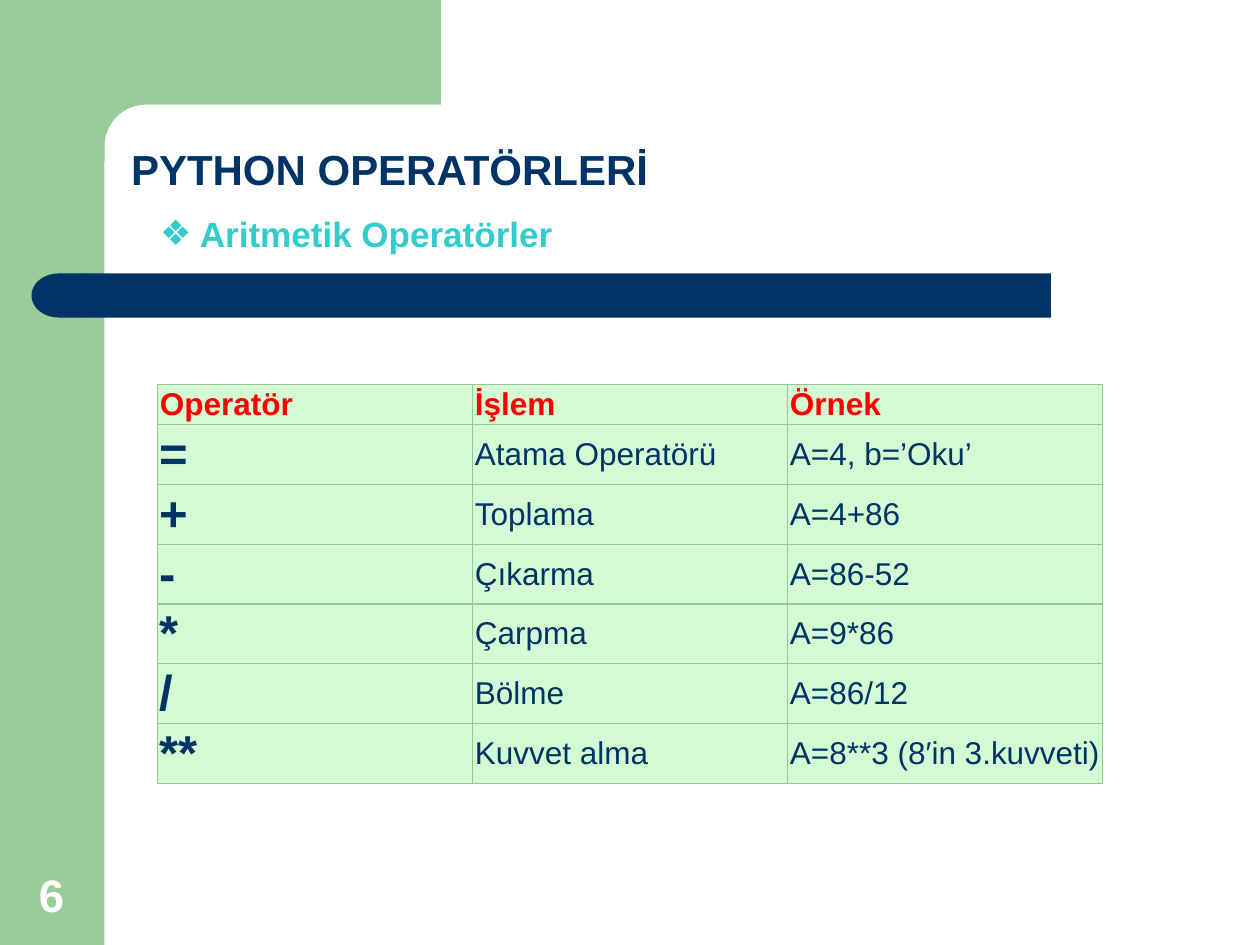
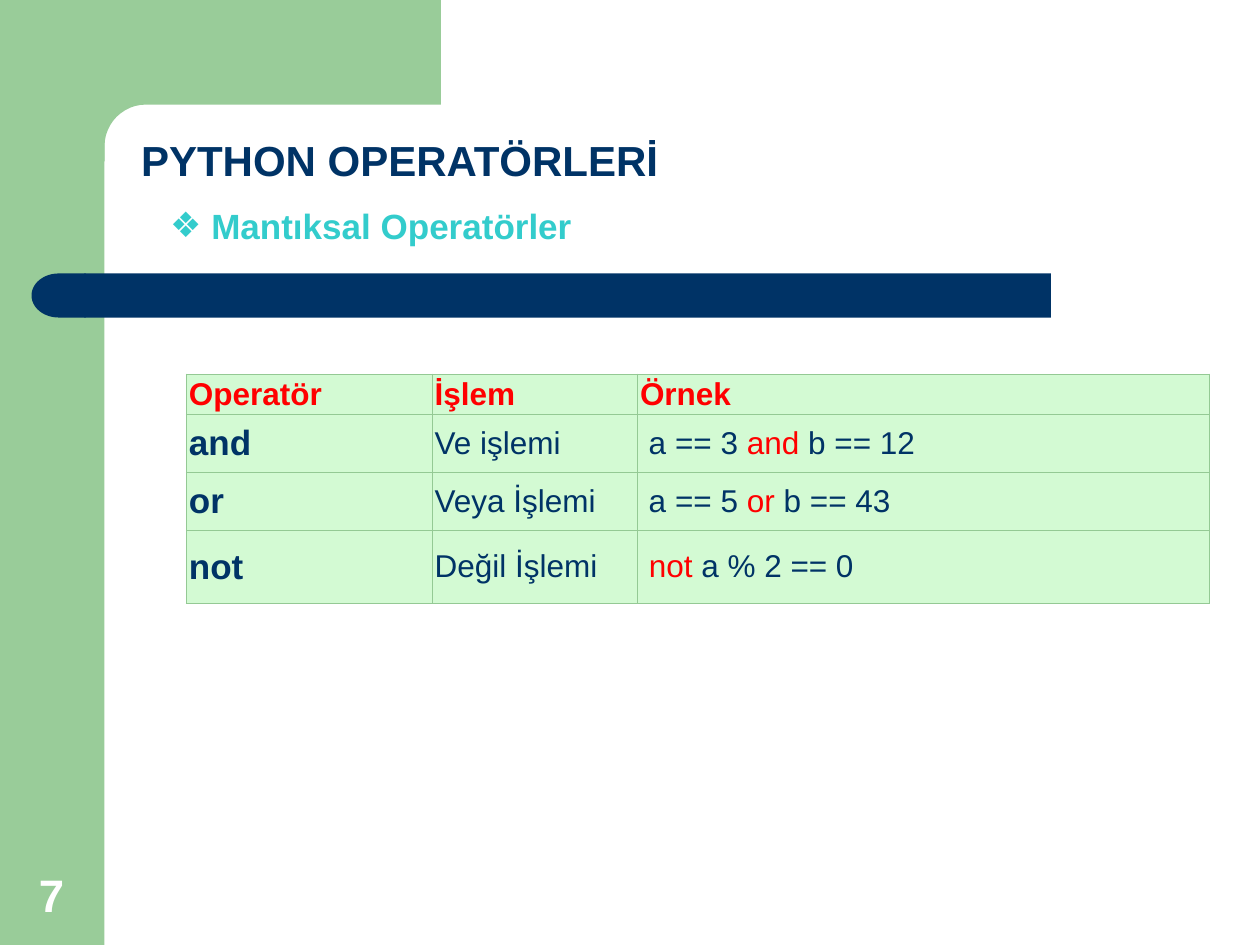
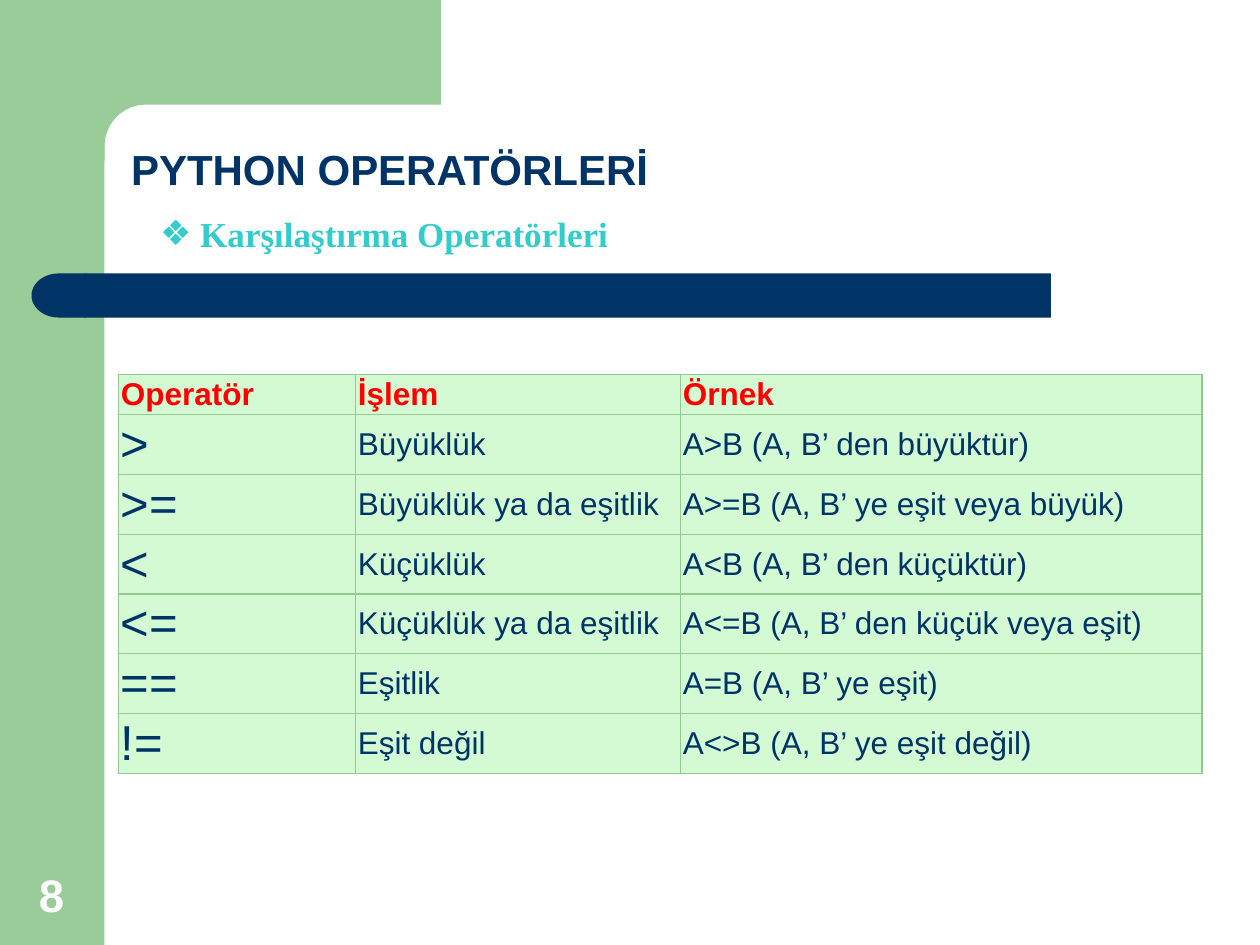
from math import cos, pi, sin

from lxml.etree import SubElement
from pptx import Presentation
from pptx.dml.color import RGBColor
from pptx.enum.shapes import MSO_SHAPE
from pptx.enum.text import MSO_ANCHOR, MSO_AUTO_SIZE, PP_ALIGN
from pptx.oxml import parse_xml
from pptx.oxml.ns import nsdecls, qn
from pptx.util import Inches, Pt

GREEN, NAVY, TEAL, RED, WHITE = "99CC99", "003366", "33CCCC", "FF0000", "FFFFFF"
PALE, EDGE = "D3FAD3", "94C994"
HEADS = ["Operatör", "İşlem", "Örnek"]

# Each topic: text, font, title spot, table spot, columns, rows, symbol style, cells
TOPICS = [
    dict(name="Aritmetik Operatörler", font="Arial", title=(0.94, 1.09),
         spot=(1.25, 3.05), cols=[2.5] * 3, rows=[0.32] + [0.475] * 6,
         size=28, bold=True, cells=[
             ("=", "Atama Operatörü", "A=4, b=’Oku’"),
             ("+", "Toplama", "A=4+86"),
             ("-", "Çıkarma", "A=86-52"),
             ("*", "Çarpma", "A=9*86"),
             ("/", "Bölme", "A=86/12"),
             ("**", "Kuvvet alma", "A=8**3 (8′in 3.kuvveti)")]),
    dict(name="Mantıksal Operatörler", font="Arial", title=(1.02, 1.02),
         spot=(1.48, 2.97), cols=[1.95, 1.63, 4.54], rows=[0.32, 0.46, 0.46, 0.58],
         size=20, bold=True, cells=[
             ("and", "Ve işlemi", [" a == 3 ", "and", " b == 12"]),
             ("or", "Veya İşlemi", [" a == 5 ", "or", " b == 43"]),
             ("not", "Değil İşlemi", [" ", "not", " a % 2 == 0"])]),
    dict(name="Karşılaştırma Operatörleri", font="Times New Roman", title=(0.94, 1.09),
         spot=(0.94, 2.97), cols=[1.88, 2.58, 4.14], rows=[0.32] + [0.475] * 6,
         size=28, bold=False, cells=[
             (">", "Büyüklük", "A>B (A, B’ den büyüktür)"),
             (">=", "Büyüklük ya da eşitlik", "A>=B (A, B’ ye eşit veya büyük)"),
             ("<", "Küçüklük", "A<B (A, B’ den küçüktür)"),
             ("<=", "Küçüklük ya da eşitlik", "A<=B (A, B’ den küçük veya eşit)"),
             ("==", "Eşitlik", "A=B (A, B’ ye eşit)"),
             ("!=", "Eşit değil", "A<>B (A, B’ ye eşit değil)")]),
]


def tint(color, code):
    color.rgb = RGBColor.from_string(code)


def put(para, text, size=18, code=NAVY, bold=False, font="Arial"):
    run = para.add_run()
    run.text = text
    run.font.size, run.font.bold, run.font.name = Pt(size), bold, font
    tint(run.font.color, code)


prs = Presentation()
prs.slide_width, prs.slide_height = Inches(10), Inches(7.5)
layout = prs.slide_layouts[1]
slides = [prs.slides.add_slide(layout) for topic in TOPICS]

# Shared bands: side strip, top block with a round inner corner, navy bar
shapes = slides[0].shapes
side = shapes.add_shape(MSO_SHAPE.RECTANGLE, 0, 0, Inches(0.83), Inches(7.5))
turns = [pi / 2 * step / 12 for step in range(13)]
curve = [(1.16 - 0.33 * sin(turn), 1.16 - 0.33 * cos(turn)) for turn in turns]
outline = [(3.5, 0.83), *curve, (0.83, 1.28), (0.5, 1.28), (0.5, 0)]
pen = shapes.build_freeform(Inches(3.5), 0)
pen.add_line_segments([(Inches(x), Inches(y)) for x, y in outline])
block = pen.convert_to_shape()
bar = shapes.add_shape(MSO_SHAPE.ROUNDED_RECTANGLE, Inches(0.67), Inches(2.17),
                       Inches(7.67), Inches(0.35))
bar.adjustments[0] = 0
cap = shapes.add_shape(MSO_SHAPE.FLOWCHART_DELAY, Inches(0.25), Inches(2.17),
                       Inches(0.43), Inches(0.35))
cap.rotation = 180

# Move the bands to the layout, behind its placeholders
bands = [(side, GREEN), (block, GREEN), (bar, NAVY), (cap, NAVY)]
for place, (band, code) in enumerate(bands, 2):
    band.shadow.inherit = False
    band.fill.solid()
    tint(band.fill.fore_color, code)
    band.line.fill.background()
    layout.shapes.element.insert(place, band.element)

for page, (slide, topic) in enumerate(zip(slides, TOPICS), 6):
    # Title and bulleted topic
    left, top = topic["title"]
    title, body = slide.placeholders
    for box, x, y, height in [(title, left, top, 0.5),
                              (body, left + 0.23, top + 0.55, 0.44)]:
        box.left, box.top = Inches(x), Inches(y)
        box.width, box.height = Inches(9.22), Inches(height)
        frame = box.text_frame
        frame.auto_size = MSO_AUTO_SIZE.NONE
        frame.vertical_anchor = MSO_ANCHOR.TOP
        frame.paragraphs[0].alignment = PP_ALIGN.LEFT
        frame.paragraphs[0].space_before = Pt(0)
    put(title.text_frame.paragraphs[0], "PYTHON OPERATÖRLERİ", size=24, bold=True)
    para = body.text_frame.paragraphs[0]
    put(para, " " + topic["name"], size=20, code=TEAL, bold=True, font=topic["font"])
    props = para._p.get_or_add_pPr()
    props.set("marL", "0")
    props.set("indent", "0")
    SubElement(SubElement(props, qn("a:buClr")), qn("a:srgbClr"), val=TEAL)
    SubElement(props, qn("a:buFont"), typeface="Arial")
    SubElement(props, qn("a:buChar"), char="❖")

    # Operator table
    cols, rows = topic["cols"], topic["rows"]
    x, y = topic["spot"]
    table = slide.shapes.add_table(len(rows), len(cols), Inches(x), Inches(y),
                                   Inches(sum(cols)), Inches(sum(rows))).table
    table.first_row = table.horz_banding = False
    for col, width in zip(table.columns, cols):
        col.width = Inches(width)
    for row, height, texts in zip(table.rows, rows, [HEADS, *topic["cells"]]):
        row.height = Inches(height)
        for spot, (cell, text) in enumerate(zip(row.cells, texts)):
            cell.vertical_anchor = MSO_ANCHOR.MIDDLE
            cell.margin_left = cell.margin_right = Inches(0.02)
            cell.margin_top = cell.margin_bottom = Inches(0.02)
            cell.fill.solid()
            tint(cell.fill.fore_color, PALE)
            for place, edge in enumerate(["lnL", "lnR", "lnT", "lnB"]):
                cell._tc.get_or_add_tcPr().insert(place, parse_xml(
                    f'<a:{edge} {nsdecls("a")} w="{Pt(0.75)}"><a:solidFill>'
                    f'<a:srgbClr val="{EDGE}"/></a:solidFill></a:{edge}>'))
            para = cell.text_frame.paragraphs[0]
            if texts is HEADS:
                put(para, text, code=RED, bold=True)
            elif spot == 0:
                put(para, text, size=topic["size"], bold=topic["bold"])
            elif isinstance(text, list):
                for part, code in zip(text, [NAVY, RED, NAVY]):
                    put(para, part, code=code)
            else:
                put(para, text)

    # Page number
    box = slide.shapes.add_textbox(Inches(0.09), Inches(6.83), Inches(0.64), Inches(0.53))
    box.text_frame.word_wrap = True
    box.text_frame.vertical_anchor = MSO_ANCHOR.BOTTOM
    para = box.text_frame.paragraphs[0]
    para.alignment = PP_ALIGN.CENTER
    put(para, str(page), size=26, code=WHITE, bold=True)

prs.save("out.pptx")
